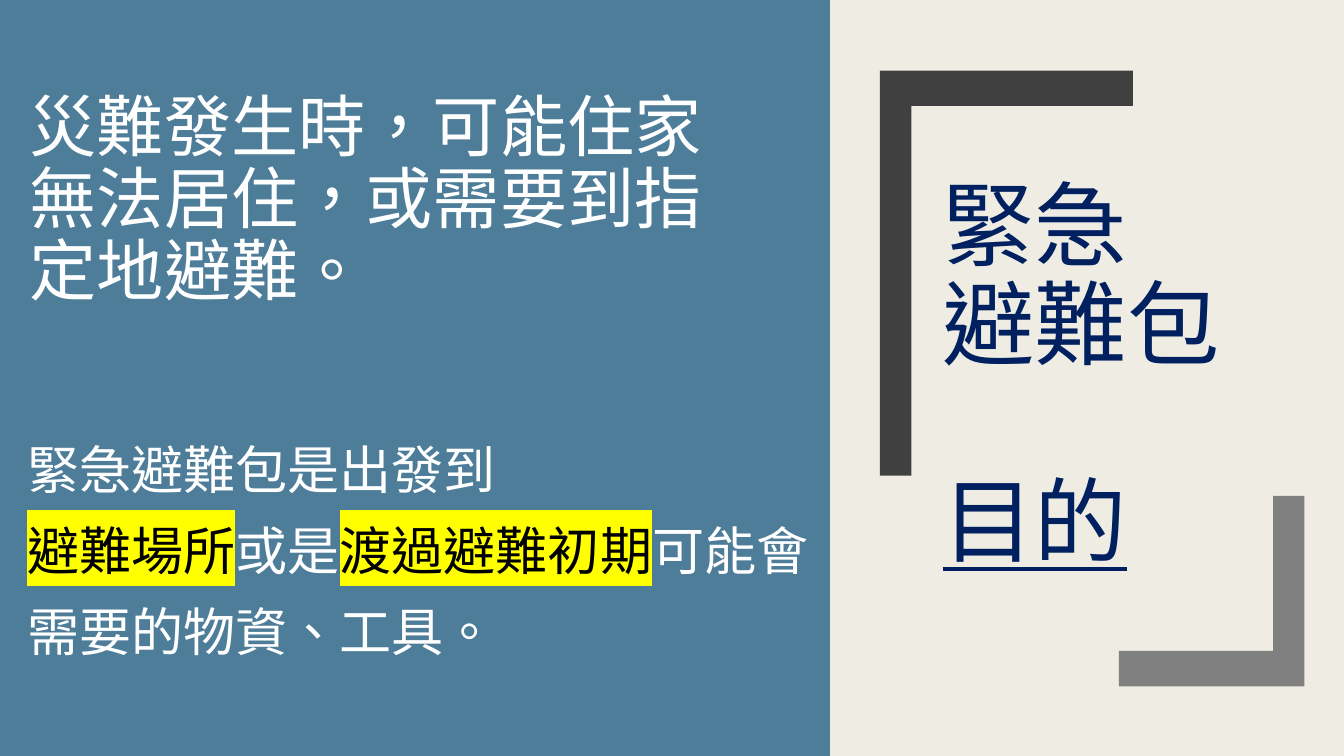
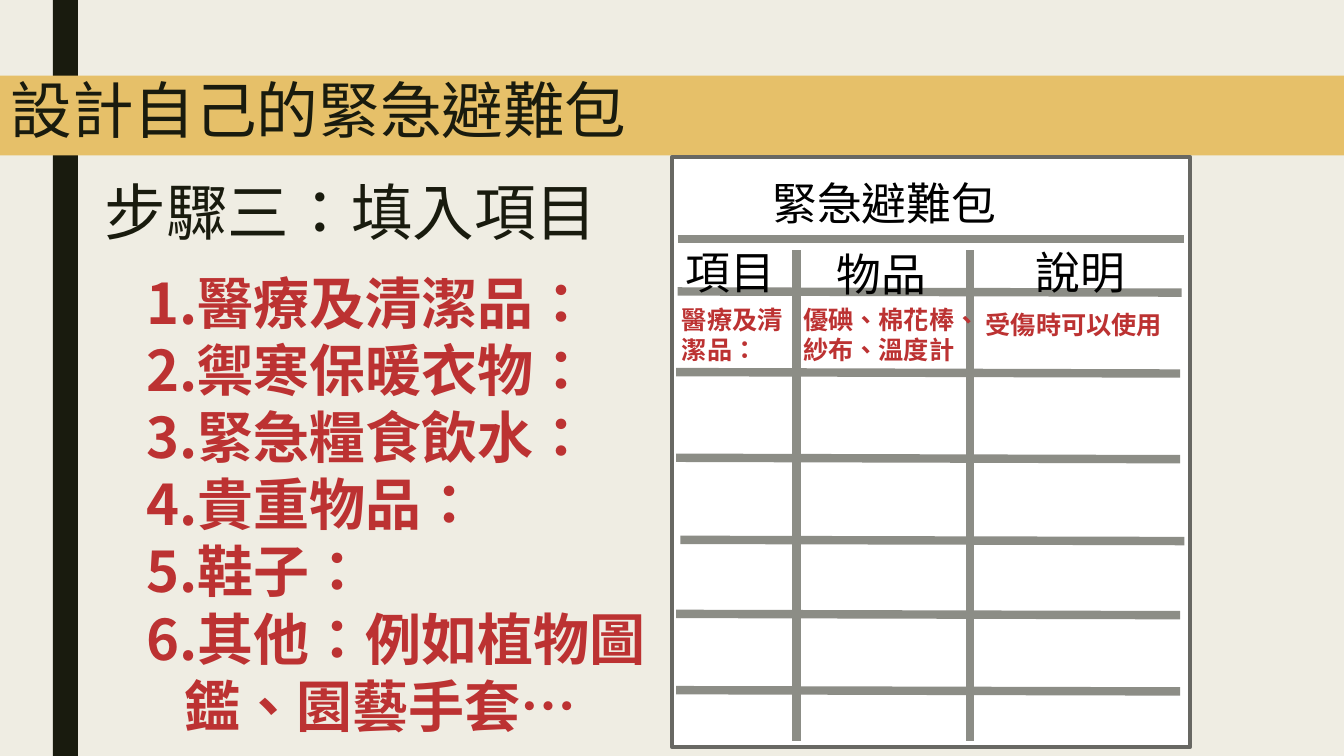
import pptx
import pptx.dml.color
import pptx.enum.lang
import pptx.enum.shapes
import pptx.enum.text
import pptx.oxml.ns
import pptx.util
from lxml import etree

Pt = pptx.util.Pt
qn = pptx.oxml.ns.qn
ANCHOR = pptx.enum.text.MSO_ANCHOR
RECTANGLE = pptx.enum.shapes.MSO_SHAPE.RECTANGLE
STRAIGHT = pptx.enum.shapes.MSO_CONNECTOR.STRAIGHT
CHINESE = pptx.enum.lang.MSO_LANGUAGE_ID.TRADITIONAL_CHINESE

CREAM, INK, GOLD, BLUE, NAVY = "EFEDE3", "191B0E", "E6C069", "4D7D99", "002060"
RED, WHITE, BLACK, YELLOW, GRID = "BC3232", "FFFFFF", "000000", "FFFF00", "8C8D86"


def paint(fill, color):
    fill.solid()
    fill.fore_color.rgb = pptx.dml.color.RGBColor.from_string(color)


def add_text(slide, box, text, font="Lato", size=44, color=INK, bold=False, spacing=None,
             anchor=ANCHOR.TOP, gap=0, numbered=False, marked=(), underlined=()):
    frame = slide.shapes.add_textbox(*map(Pt, box)).text_frame
    frame.word_wrap = True
    frame.vertical_anchor = anchor
    for index, content in enumerate(text):
        paragraph = frame.paragraphs[0] if index == 0 else frame.add_paragraph()
        if numbered:
            properties = paragraph._p.get_or_add_pPr()
            properties.set("marL", str(Pt(27.4)))
            properties.set("indent", str(-Pt(27.4)))
            etree.SubElement(properties, qn("a:buFont"), typeface="+mj-lt")
            etree.SubElement(properties, qn("a:buAutoNum"), type="arabicPeriod")
        if spacing:
            paragraph.line_spacing = spacing
        if index and gap:
            paragraph.space_before = Pt(gap)
        for piece in [content] if isinstance(content, str) else content:
            if piece == "\n":
                paragraph.add_line_break()
                continue
            run = paragraph.add_run()
            run.text = piece
            run.font.name = font
            run.font.size = Pt(size)
            run.font.bold = bold
            run.font.language_id = CHINESE
            run.font.underline = piece in underlined
            paint(run.font.fill, BLACK if piece in marked else color)
            if piece in marked:
                highlight = etree.Element(qn("a:highlight"))
                etree.SubElement(highlight, qn("a:srgbClr"), val=YELLOW)
                run._r.rPr.find(qn("a:solidFill")).addnext(highlight)


presentation = pptx.Presentation()
presentation.slide_width, presentation.slide_height = Pt(960), Pt(540)
paint(presentation.slide_master.background.fill, CREAM)
blank = presentation.slide_layouts[6]
purpose = presentation.slides.add_slide(blank)
design = presentation.slides.add_slide(blank)

for slide, box, fill, border in [
    (purpose, (0, 0, 592.8, 540), BLUE, None),
    (design, (37.7, 0, 18, 540), INK, None),
    (design, (0, 54, 960, 57), GOLD, None),
    (design, (480.2, 112, 369.8, 421.8), WHITE, "686863"),
]:
    shape = slide.shapes.add_shape(RECTANGLE, *map(Pt, box))
    shape.shadow.inherit = False
    paint(shape.fill, fill)
    if border:
        paint(shape.line.fill, border)
        shape.line.width = Pt(2.75)
    else:
        shape.line.fill.background()

for color, corners in [
    ("404040", [(651, 339.8), (628.5, 339.8), (628.5, 50.4), (809.3, 50.4), (809.3, 75.6), (651, 75.6)]),
    ("808080", [(909.4, 354.2), (931.7, 354.2), (931.7, 490.3), (799.2, 490.3), (799.2, 465), (909.4, 465)]),
]:
    points = [(Pt(x), Pt(y)) for x, y in corners]
    builder = purpose.shapes.build_freeform(*points[0])
    builder.add_line_segments(points[1:], close=True)
    bracket = builder.convert_to_shape()
    bracket.shadow.inherit = False
    paint(bracket.fill, color)
    bracket.line.fill.background()

row_lines = [(484, 846, 170.6, 0), (484, 844, 208.2, 0.8), (483, 843, 265.8, 1), (483, 843, 327, 1),
             (486, 846, 385.6, 0.9), (483, 843, 438.5, 0.9), (483, 843, 493, 0.9)]
grid_lines = [(left, y, right, y + drop) for left, right, y, drop in row_lines]
grid_lines += [(x, 529.2, x, 178.6) for x in (569, 692.8)]
for ends in grid_lines:
    connector = design.shapes.add_connector(STRAIGHT, *map(Pt, ends))
    paint(connector.line.fill, GRID)
    connector.line.width = Pt(6)
    etree.SubElement(connector._element.spPr, qn("a:effectLst"))

heading = dict(spacing=0.89)
label = dict(size=32, color=BLACK)
entry = dict(font="Arial", size=18, color=RED, bold=True)
for slide, box, text, style in [
    (purpose, (666.2, 93.6, 226, 352.8), [["緊急", "\n", "避難包"], "目的"],
     dict(size=66, color=NAVY, spacing=0.89, anchor=ANCHOR.MIDDLE, gap=70, underlined=["目的"])),
    (purpose, (14.2, 55.8, 510.5, 177), ["災難發生時，可能住家無法居住，或需要到指定地避難。"],
     dict(font="Arial", size=48, color=WHITE, spacing=0.89, anchor=ANCHOR.MIDDLE)),
    (purpose, (12.4, 292.5, 580.3, 187.2),
     [["緊急避難包是出發到", "\n", "避難場所", "或是", "渡過避難初期", "可能會需要的物資、工具。"]],
     dict(font="Arial", size=37.2, color=WHITE, spacing=1.3, anchor=ANCHOR.MIDDLE,
          marked=["避難場所", "渡過避難初期"])),
    (design, (0.4, 54, 959, 57), ["設計自己的緊急避難包"], heading),
    (design, (67.7, 127.4, 410, 56), ["步驟三：填入項目"], heading),
    (design, (544.6, 121.7, 240, 46), ["緊急避難包"], label),
    (design, (482.4, 171.4, 87, 46), ["項目"], label),
    (design, (590.4, 172.8, 87, 46), ["物品"], label),
    (design, (732.4, 171.4, 87, 46), ["說明"], label),
    (design, (97.6, 188, 396, 345),
     ["醫療及清潔品：", "禦寒保暖衣物：", "緊急糧食飲水：", "貴重物品：", "鞋子：",
      "其他：例如植物圖鑑、園藝手套…"],
     dict(font="Arial", size=40, color=RED, bold=True, numbered=True)),
    (design, (480, 213.8, 87, 51), ["醫療及清潔品："], entry),
    (design, (566.6, 213.8, 140.4, 51), ["優碘、棉花棒、紗布、溫度計"], entry),
    (design, (697, 217.4, 140.4, 51), ["受傷時可以使用"], entry),
]:
    add_text(slide, box, text, **style)

presentation.save("out.pptx")
